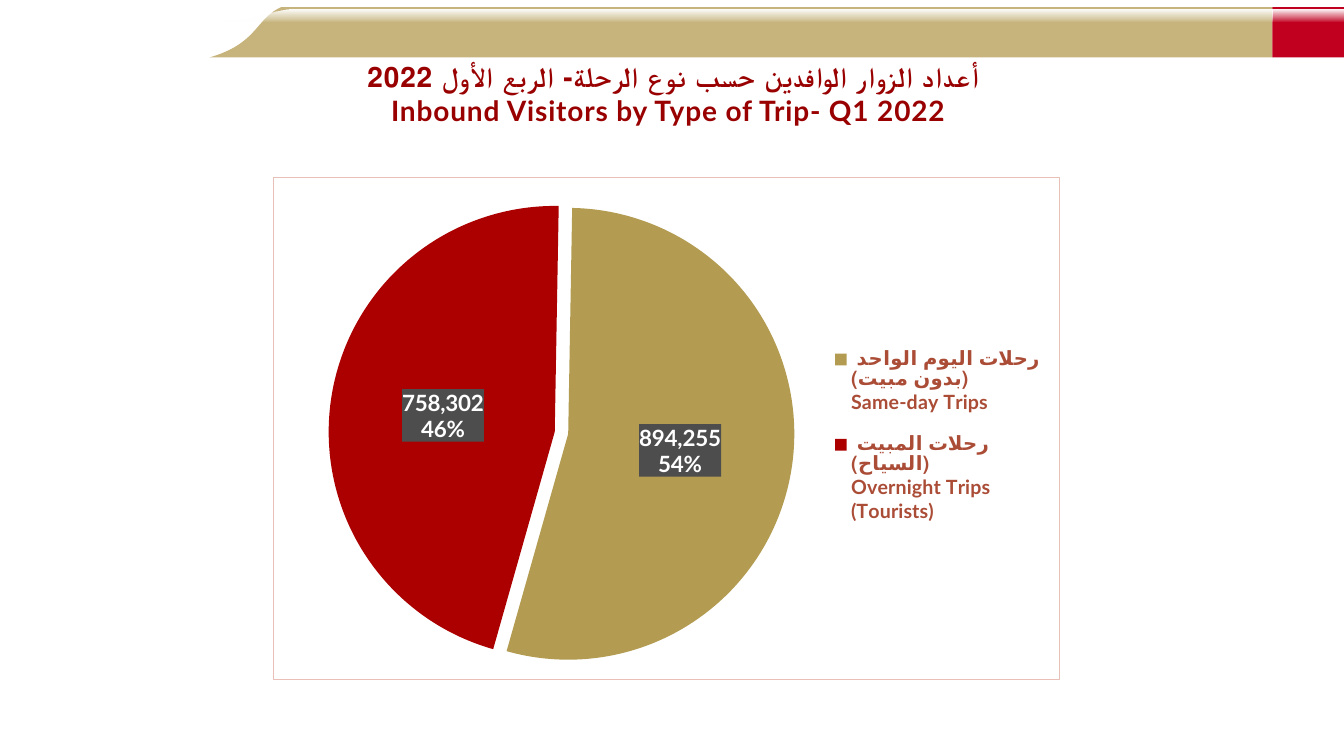
from lxml import etree
from pptx import Presentation
from pptx.chart.data import CategoryChartData
from pptx.dml.color import RGBColor
from pptx.enum.chart import XL_CHART_TYPE as ChartType, XL_LABEL_POSITION as LabelPosition
from pptx.enum.chart import XL_LEGEND_POSITION as LegendPosition
from pptx.enum.shapes import MSO_SHAPE as Preset
from pptx.enum.text import MSO_ANCHOR as Anchor, PP_ALIGN as Align
from pptx.oxml import parse_xml
from pptx.oxml.ns import nsdecls, qn
from pptx.util import Inches, Pt

WIDTH, HEIGHT = 13.33, 7.5
BAND_RIGHT = 12.62
FONT = "Lato"
COLORS = {
    "tan": "C6B47C", "crimson": "C1001F", "white": "FFFFFF", "title": "990000",
    "same_day": "B39C51", "overnight": "AC0000", "label_box": "4D4D4D",
    "legend": "AA4C36", "chart_text": "622C1F", "border": "E8C0B7",
}


def color(name):
    return RGBColor.from_string(COLORS[name])


def set_font(font, size, name, bold=True):
    font.name, font.size, font.bold = FONT, Pt(size), bold
    font.color.rgb = color(name)


presentation = Presentation()
presentation.slide_width, presentation.slide_height = Inches(WIDTH), Inches(HEIGHT)
slide = presentation.slides.add_slide(presentation.slide_layouts[5])

# Header band: flat colours first, then a white gloss fading downwards.
# Each row: left, curve end, top, bottom, heights of the curve's two handles, fills
band_layers = [
    (2.08, 2.79, 0.07, 0.57, (0.43, 0.19), ("tan", "crimson")),
    (2.17, 2.87, 0.09, 0.21, (0.17, 0.12), None),
]
for left, curve_end, top, bottom, handles, fills in band_layers:
    xs = (left, left + 0.48, left + 0.45, curve_end)
    ys = (bottom, *handles, top)
    points = []
    for step in range(25):
        t = step / 24
        weights = ((1 - t) ** 3, 3 * t * (1 - t) ** 2, 3 * t * t * (1 - t), t ** 3)
        points.append([sum(w * v for w, v in zip(weights, values)) for values in (xs, ys)])
    points += [(BAND_RIGHT, top), (BAND_RIGHT, bottom)]
    start, *others = [(Inches(x), Inches(y)) for x, y in points]
    outline = slide.shapes.build_freeform(*start)
    outline.add_line_segments(others, close=True)
    band = outline.convert_to_shape()
    end_block = slide.shapes.add_shape(
        Preset.RECTANGLE, Inches(BAND_RIGHT), Inches(top),
        Inches(WIDTH - BAND_RIGHT), Inches(bottom - top))
    for index, shape in enumerate((band, end_block)):
        shape.shadow.inherit = False
        shape.line.fill.background()
        if fills:
            shape.fill.solid()
            shape.fill.fore_color.rgb = color(fills[index])
            continue
        shape.fill.gradient()
        shape.fill.gradient_angle = 270
        for stop in shape.fill.gradient_stops:
            stop.color.rgb = color("white")
        last_stop = shape._element.spPr.findall(".//" + qn("a:srgbClr"))[-1]
        etree.SubElement(last_stop, qn("a:alpha"), val="0")

# Title, in front of the band
title = slide.shapes.title
slide.shapes._spTree.append(title._element)
title.left, title.top, title.width, title.height = map(Inches, (0.67, 0.3, 12, 1.25))
title.text_frame.vertical_anchor = Anchor.MIDDLE
paragraph = title.text_frame.paragraphs[0]
paragraph.alignment = Align.CENTER
paragraph._p.get_or_add_pPr().set("rtl", "1")
title_lines = [
    "أعداد الزوار الوافدين حسب نوع الرحلة- الربع الأول 2022",
    " Inbound Visitors by Type of Trip- Q1 2022",
]
for index, line in enumerate(title_lines):
    if index:
        paragraph.add_line_break()
    run = paragraph.add_run()
    run.text = line
    set_font(run.font, 20, "title")
    run._r.get_or_add_rPr().set("spc", "60")

# Pie chart
trips = CategoryChartData(number_format="#,##0")
trips.categories = [
    " رحلات اليوم الواحد (بدون مبيت)\nSame-day Trips ",
    " رحلات المبيت (السياح)\nOvernight Trips (Tourists) ",
]
trips.add_series("Series 1", (894255, 758302))
chart = slide.shapes.add_chart(
    ChartType.PIE, *map(Inches, (2.71, 1.76, 7.8, 4.99)), trips).chart
chart.has_title = False
set_font(chart.font, 10, "chart_text", bold=False)

chart.has_legend = True
chart.legend.position = LegendPosition.RIGHT
chart.legend.include_in_layout = False
set_font(chart.legend.font, 14, "legend")

plot = chart.plots[0]
plot.vary_by_categories = True
series = plot.series[0]
for index, name in enumerate(("same_day", "overnight")):
    fill = series.points[index].format.fill
    fill.solid()
    fill.fore_color.rgb = color(name)
overnight_point = series._element.findall(qn("c:dPt"))[1]
overnight_point.find(qn("c:spPr")).addprevious(
    parse_xml(f'<c:explosion {nsdecls("c")} val="6"/>'))
etree.SubElement(plot._element, qn("c:firstSliceAng"), val="1")

labels = series.data_labels
labels.show_value = labels.show_percentage = True
labels.position = LabelPosition.CENTER
labels.number_format = "#,##0"
labels.number_format_is_linked = True
set_font(labels.font, 16, "white")
label_latin = labels._element.find(".//" + qn("a:latin"))
for tag in ("a:cs", "a:ea"):
    label_latin.addnext(etree.Element(qn(tag), typeface=FONT))
separator = parse_xml(f'<c:separator {nsdecls("c")}>\n</c:separator>')
labels._element.find(qn("c:showBubbleSize")).addnext(separator)

# Boxes behind the labels and the chart
boxes = [
    (labels._element, "label_box", "<a:noFill/>"),
    (chart._chartSpace, "white",
     f'<a:solidFill><a:srgbClr val="{COLORS["border"]}"/></a:solidFill>'),
]
for element, fill_name, line_fill in boxes:
    element.find(qn("c:txPr")).addprevious(parse_xml(
        f'<c:spPr {nsdecls("c", "a")}><a:solidFill><a:srgbClr val="{COLORS[fill_name]}"/>'
        f'</a:solidFill><a:ln w="{Pt(0.75)}">{line_fill}</a:ln></c:spPr>'))

# Places of pie and legend, as shares of the chart
plot_area = chart._chartSpace.chart.plotArea
for old_layout in plot_area.findall(qn("c:layout")):
    plot_area.remove(old_layout)
places = [
    (plot_area, 0, (0.08, 0.06, 0.59, 0.9)),
    (chart.legend._element, 1, (0.7, 0.3, 0.29, 0.43)),
]
for element, position, shares in places:
    layout = etree.Element(qn("c:layout"))
    manual = etree.SubElement(layout, qn("c:manualLayout"))
    for tag in ("xMode", "yMode"):
        etree.SubElement(manual, qn(f"c:{tag}"), val="edge")
    for tag, share in zip("xywh", shares):
        etree.SubElement(manual, qn(f"c:{tag}"), val=str(share))
    element.insert(position, layout)

presentation.save("out.pptx")
